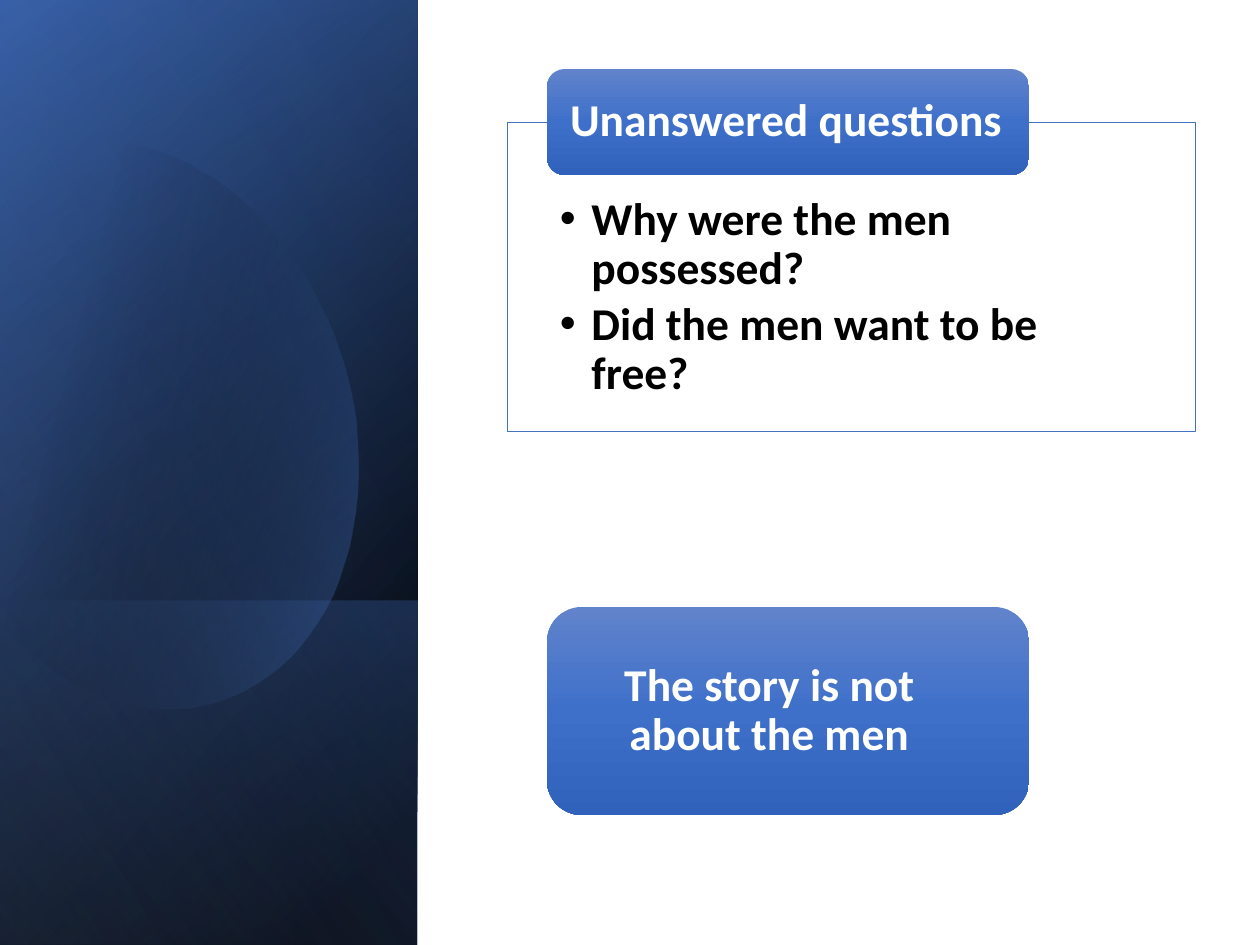
import lxml.etree
import pptx
import pptx.util
import pptx.dml.color
import pptx.enum.shapes
import pptx.enum.text
import pptx.oxml.ns

RGB = pptx.dml.color.RGBColor
BLACK = RGB(0x00, 0x00, 0x00)
WHITE = RGB(0xFF, 0xFF, 0xFF)
BLUE = RGB(0x44, 0x72, 0xC4)
NAVY = RGB(0x2F, 0x55, 0x97)
PALE = RGB(0x8F, 0xAA, 0xDC)
CARD_TOP = RGB(0x61, 0x83, 0xCB)
CARD_MID = RGB(0x3E, 0x70, 0xCA)
CARD_END = RGB(0x30, 0x62, 0xBB)

SCALE = 914400 / 126  # EMU per px
RECT = pptx.enum.shapes.MSO_SHAPE.RECTANGLE
ROUND = pptx.enum.shapes.MSO_SHAPE.ROUNDED_RECTANGLE
ALIGN = pptx.enum.text.PP_ALIGN
ANCHOR = pptx.enum.text.MSO_ANCHOR
qn = pptx.oxml.ns.qn


def set_gradient(sp, stops, angle):
    """Stops are (position %, colour, opacity %)."""
    sp.shadow.inherit = False
    sp.line.fill.background()
    sp.fill.gradient()
    grad = sp.element.spPr.find(qn("a:gradFill"))
    for child in list(grad):
        grad.remove(child)
    grad.set("rotWithShape", "1")
    gs_list = lxml.etree.SubElement(grad, qn("a:gsLst"))
    for pos, color, opacity in stops:
        gs = lxml.etree.SubElement(gs_list, qn("a:gs"), pos=str(pos * 1000))
        clr = lxml.etree.SubElement(gs, qn("a:srgbClr"), val=str(color))
        if opacity < 100:
            lxml.etree.SubElement(clr, qn("a:alpha"), val=str(opacity * 1000))
    lxml.etree.SubElement(grad, qn("a:lin"), ang=str(angle * 60000), scaled="0")


def set_text(sp, box, lines, insets, color, anchor, align, after):
    """Place a text shape, bring it to the front and format its lines."""
    sp.left, sp.top, sp.width, sp.height = [round(v * SCALE) for v in box]
    sp.element.getparent().append(sp.element)
    tf = sp.text_frame
    tf.text = "\n".join(lines)
    tf.word_wrap = True
    tf.auto_size = pptx.enum.text.MSO_AUTO_SIZE.NONE
    tf.vertical_anchor = anchor
    tf.margin_left, tf.margin_top, tf.margin_right, tf.margin_bottom = [
        round(v * SCALE) for v in insets]
    for p in tf.paragraphs:
        p.alignment = align
        p.line_spacing = 0.9
        p.space_before = pptx.util.Pt(0)
        p.space_after = pptx.util.Pt(after)
        font = p.runs[0].font
        font.name, font.size, font.bold = "Calibri", pptx.util.Pt(26), True
        font.color.rgb = color


prs = pptx.Presentation()
prs.slide_width = round(1260 * SCALE)
prs.slide_height = round(945 * SCALE)
s = prs.slides.add_slide(prs.slide_layouts[1])
title, body = s.placeholders[0], s.placeholders[1]

# Side band: turned rectangles with layered gradients, blob below the last one
side = (-264, 263, 945, 418)
layers = [
    (side, [(8, BLACK, 100), (100, NAVY, 100)], 50),
    (side, [(0, BLACK, 0), (99, BLUE, 46)], 30),
    ((36, 564, 345, 418), [(2, BLUE, 29), (100, BLACK, 30)], 130),
    (side, [(0, BLACK, 0), (99, PALE, 11)], 120),
]
for i, (box, stops, angle) in enumerate(layers):
    if i == 3:
        # Blob: cubic curves sampled into short segments
        curves = [
            [(121, 144), (215, 154), (307, 242), (344, 365)],
            [(344, 365), (387, 519), (330, 669), (215, 702)],
            [(215, 702), (144, 723), (67, 693), (9, 630)],
            [(-19, 194), (3, 173), (28, 158), (57, 149)],
            [(57, 149), (78, 142), (100, 141), (121, 144)],
        ]
        points = []
        for a, b, c, d in curves:
            for step in range(25):
                t = step / 24
                u = 1 - t
                points.append(tuple(
                    u**3 * a[k] + 3 * u * u * t * b[k] + 3 * u * t * t * c[k] + t**3 * d[k]
                    for k in (0, 1)))
            if d == (9, 630):
                points += [(-4, 615), (-31, 209)]
        fb = s.shapes.build_freeform(*points[0], scale=SCALE)
        fb.add_line_segments(points[1:], close=True)
        set_gradient(fb.convert_to_shape(), [(29, BLACK, 0), (100, BLUE, 43)], 14)
    sp = s.shapes.add_shape(RECT, *[round(v * SCALE) for v in box])
    sp.rotation = 90
    sp.element.spPr.find(qn("a:xfrm")).set("flipH", "1")
    set_gradient(sp, stops, angle)

# Question panel
panel_box = (507, 122, 689, 310)
panel = s.shapes.add_shape(RECT, *[round(v * SCALE) for v in panel_box])
panel.shadow.inherit = False
panel.fill.solid()
panel.fill.fore_color.rgb = WHITE
panel.line.color.rgb = BLUE
panel.line.width = pptx.util.Pt(0.5)

# Blue cards
for top, height in [(69, 106), (607, 208)]:
    card = s.shapes.add_shape(ROUND, *[round(v * SCALE) for v in (547, top, 482, height)])
    set_gradient(card, [(0, CARD_TOP, 100), (50, CARD_MID, 100), (100, CARD_END, 100)], 90)

# Text
set_text(body, panel_box,
         ["Why were the men possessed?", "Did the men want to be free?"],
         (53, 74, 60, 25), BLACK, ANCHOR.TOP, ALIGN.LEFT, 4)
for p in body.text_frame.paragraphs:
    p.level = 1
    pPr = p._p.get_or_add_pPr()
    pPr.set("marL", "228600")
    pPr.set("indent", "-228600")
    lxml.etree.SubElement(pPr, qn("a:buFont"), typeface="Arial")
    lxml.etree.SubElement(pPr, qn("a:buChar"), char="•")
set_text(title, (552, 74, 473, 96), ["Unanswered questions"],
         (18, 0, 10, 0), WHITE, ANCHOR.MIDDLE, ALIGN.LEFT, 0)
story = s.shapes.add_textbox(0, 0, 0, 0)
set_text(story, (599, 617, 341, 188), ["The story is not about the men"],
         (18, 0, 18, 0), WHITE, ANCHOR.MIDDLE, ALIGN.CENTER, 0)

prs.save("out.pptx")
